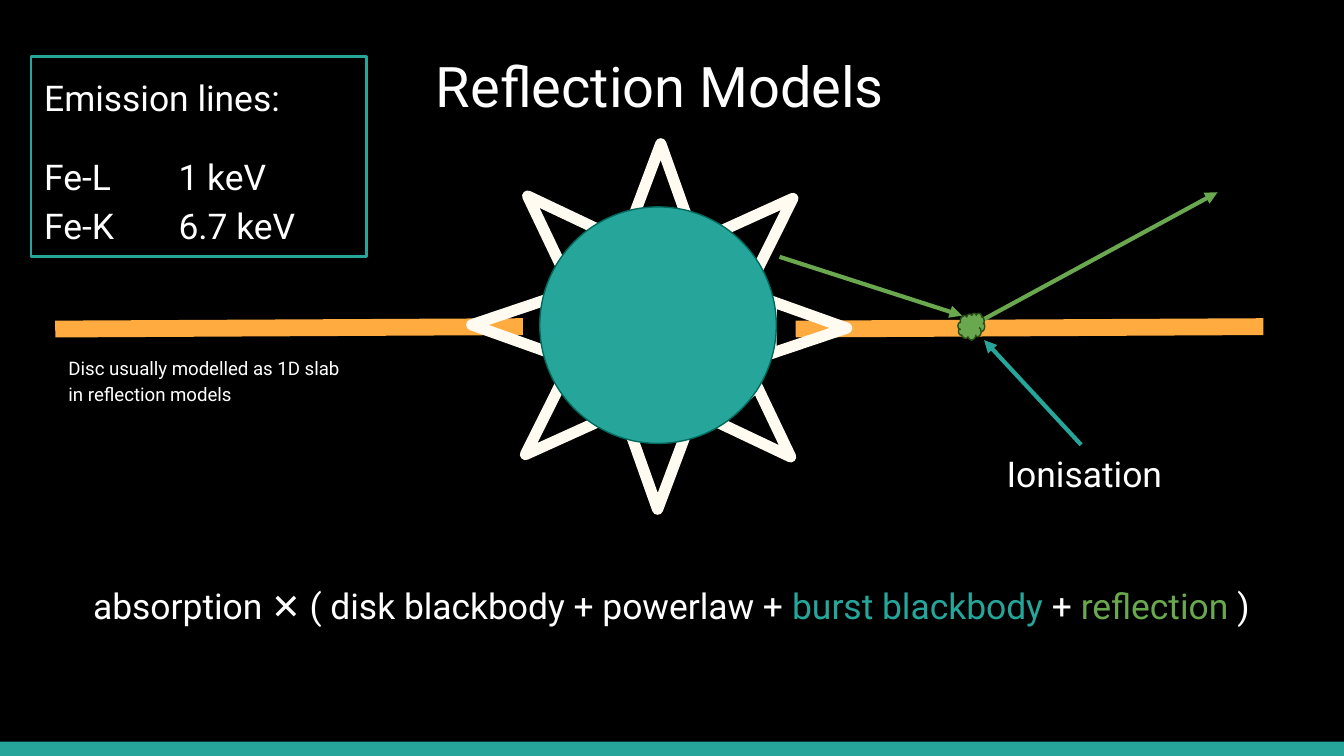
from lxml import etree
from pptx import Presentation
from pptx.dml.color import RGBColor
from pptx.enum.shapes import MSO_CONNECTOR as CONN, MSO_SHAPE as SHAPE
from pptx.enum.text import MSO_ANCHOR as ANCHOR, PP_ALIGN as ALIGN
from pptx.oxml.ns import qn
from pptx.util import Pt

BLACK = RGBColor(0x00, 0x00, 0x00)
WHITE = RGBColor(0xFF, 0xFF, 0xFF)
CREAM = RGBColor(0xFF, 0xFB, 0xF0)
TEAL = RGBColor(0x26, 0xA6, 0x9A)
DARK_TEAL = RGBColor(0x00, 0x69, 0x5C)
ORANGE = RGBColor(0xFF, 0xAB, 0x40)
GREEN = RGBColor(0x6A, 0xA8, 0x4F)
DARK_GREEN = RGBColor(0x27, 0x4E, 0x13)
FONT = "Roboto"
INSET = 7.2


def add_shape(s, kind, box, fill=None, line=None, width=0.75):
    """Add a preset shape with an optional fill and outline."""
    sp = s.shapes.add_shape(kind, *map(Pt, box))
    sp.shadow.inherit = False
    if fill is None:
        sp.fill.background()
    else:
        sp.fill.solid()
        sp.fill.fore_color.rgb = fill
    if line is None:
        sp.line.fill.background()
    else:
        sp.line.color.rgb = line
        sp.line.width = Pt(width)
    return sp


def add_line(s, start, end, color, width=2.25, arrow=True):
    """Add a straight line, with an arrowhead at its end if wanted."""
    sp = s.shapes.add_connector(CONN.STRAIGHT, *map(Pt, start + end))
    sp.line.color.rgb = color
    sp.line.width = Pt(width)
    if arrow:
        etree.SubElement(sp.line._get_or_add_ln(), qn("a:tailEnd"), type="triangle")
    etree.SubElement(sp._element.spPr, qn("a:effectLst"))
    return sp


def add_text(s, box, paragraphs, size=19, align=ALIGN.LEFT, spacing=1.15, gaps=None, tab=None):
    """Add a text box of paragraphs, each a list of (text, colour) runs."""
    tf = s.shapes.add_textbox(*map(Pt, box)).text_frame
    tf.word_wrap = True
    tf.vertical_anchor = ANCHOR.TOP
    tf.margin_left = tf.margin_right = tf.margin_top = tf.margin_bottom = Pt(INSET)
    for i, runs in enumerate(paragraphs):
        p = tf.add_paragraph() if i else tf.paragraphs[0]
        p.alignment = align
        p.line_spacing = spacing
        p.space_before = Pt((gaps or {}).get(i, 0))
        if tab:
            tabs = etree.SubElement(p._p.get_or_add_pPr(), qn("a:tabLst"))
            etree.SubElement(tabs, qn("a:tab"), pos=str(Pt(tab)), algn="l")
        for text, color in runs:
            r = p.add_run()
            r.text = text
            r.font.name = FONT
            r.font.size = Pt(size)
            r.font.color.rgb = color


def add_disc(s, box):
    """Draw the two slightly tilted halves of the disc at both ends of the box."""
    x, y, w, h = box
    half = 250.5
    for left in (x, x + w - half):
        add_line(s, (left, y + h), (left + half, y), ORANGE, width=9, arrow=False)


def add_star(s, box):
    """Draw the rays and the round body of the star in the box."""
    x, y, w, h = box
    rays = add_shape(s, SHAPE.SUN, box, line=CREAM, width=6)
    rays.rotation = 0.5
    d = 126.7
    add_shape(s, SHAPE.OVAL, (x + (w - d) / 2 - 0.6, y + (h - d) / 2 - 0.7, d, d),
              fill=TEAL, line=DARK_TEAL)


def add_reflection(s, box):
    """Draw the ray that reflects off a cloud in the disc, and its ionisation label."""
    x, y, w, h = box
    add_line(s, (x, y + 34.6), (x + 97.8, y + 66.1), GREEN)
    add_line(s, (x + 96.6, y + 75), (x + w, y), GREEN)
    add_shape(s, SHAPE.CLOUD, (x + 95.6, y + 64.8, 14.4, 14.4), fill=GREEN, line=DARK_GREEN)
    add_text(s, (x + 114.6, y + h - 6.7, 167, 37.4), [[("Ionisation", WHITE)]])
    add_line(s, (x + 161.6, y + h), (x + 109.6, y + 79.2), TEAL)


def add_emission_lines(s, box):
    """Draw the framed list of emission lines."""
    add_shape(s, SHAPE.RECTANGLE, box, line=TEAL, width=1.5)
    rows = ["Emission lines:", "Fe-L\t1 keV", "Fe-K\t6.7 keV"]
    add_text(s, box, [[(row, WHITE)] for row in rows], gaps={1: 16}, tab=72)


def add_formula(s, box):
    """Write the model formula with its coloured terms."""
    runs = [("absorption ✕ ( disk blackbody + powerlaw + ", WHITE), ("burst blackbody ", TEAL),
            ("+ ", WHITE), ("reflection ", GREEN), (")", WHITE)]
    add_text(s, box, [runs], align=ALIGN.CENTER)


def build_slide(prs):
    """Build the reflection models slide."""
    s = prs.slides.add_slide(prs.slide_layouts[6])
    s.background.fill.solid()
    s.background.fill.fore_color.rgb = BLACK
    add_shape(s, SHAPE.RECTANGLE, (0, 397.4, 720, 7.6), fill=TEAL)
    add_disc(s, (29.6, 175, 647.2, 1.3))
    add_text(s, (16.6, 20.2, 674, 45.4), [[("Reflection Models", WHITE)]],
             size=30, align=ALIGN.CENTER, spacing=1)
    add_formula(s, (31.7, 302.4, 656, 37.4))
    add_star(s, (252.7, 77, 200.9, 195.8))
    add_reflection(s, (417.6, 103, 234.7, 135.3))
    add_text(s, (29.6, 182.2, 167, 37.4),
             [[("Disc usually modelled as 1D slab in reflection models", WHITE)]], size=10)
    add_emission_lines(s, (16.6, 30.2, 180, 107.3))


def main():
    """Create and save the presentation."""
    prs = Presentation()
    prs.slide_width, prs.slide_height = Pt(720), Pt(405)
    build_slide(prs)
    prs.save("out.pptx")


if __name__ == "__main__":
    main()
